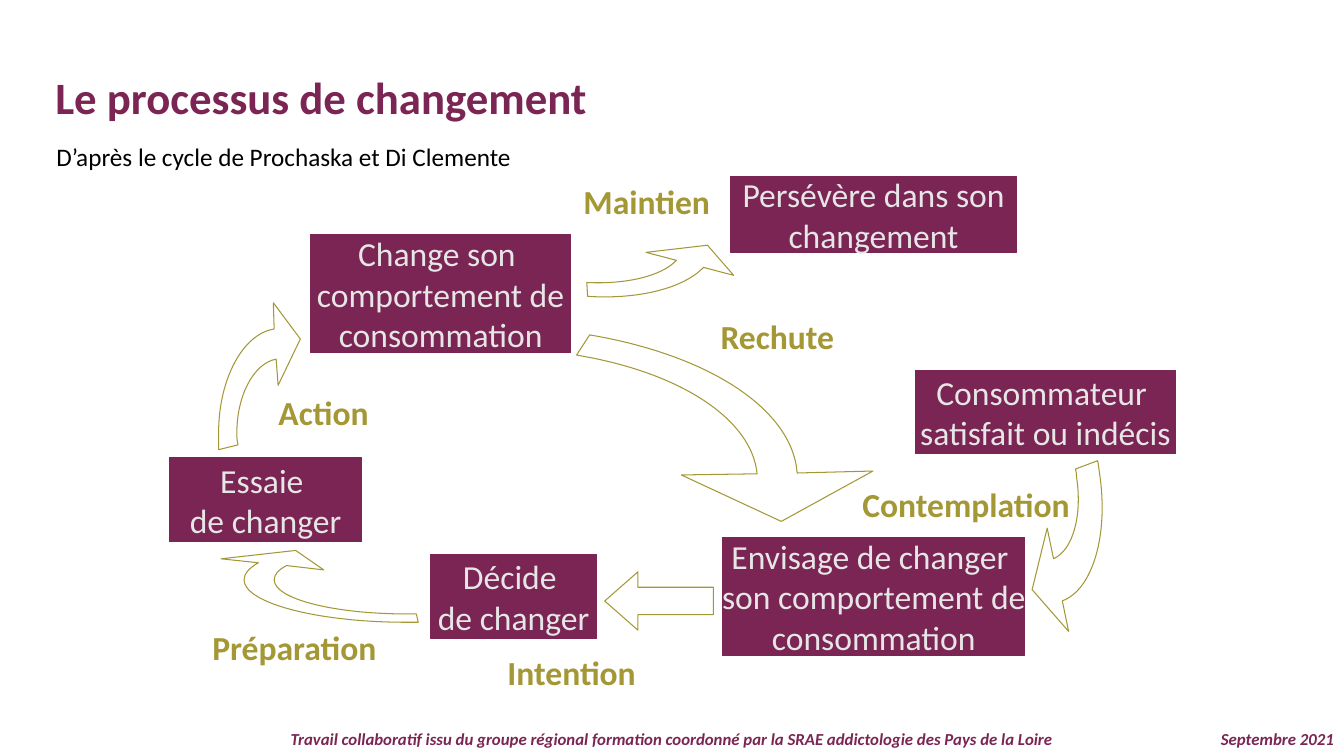
from math import cos, radians, sin

from lxml import etree
from pptx import Presentation
from pptx.dml.color import RGBColor
from pptx.enum.shapes import MSO_SHAPE
from pptx.enum.text import MSO_ANCHOR, MSO_AUTO_SIZE, PP_ALIGN
from pptx.oxml.ns import qn
from pptx.util import Cm, Pt

RECT, ARROW = MSO_SHAPE.RECTANGLE, MSO_SHAPE.LEFT_ARROW
TOP, MIDDLE = MSO_ANCHOR.TOP, MSO_ANCHOR.MIDDLE
LEFT, CENTER, RIGHT = PP_ALIGN.LEFT, PP_ALIGN.CENTER, PP_ALIGN.RIGHT
FIXED = MSO_AUTO_SIZE.NONE

PLUM, OLIVE, PALE, WHITE, BLACK = "7A2553", "A49735", "E7E6E6", "FFFFFF", "000000"
WIDTH, HEIGHT = 33.87, 19.05

# Centimetres from the corner of the cycle: left, top, width, height
STAGES = [
    ("Consommateur \nsatisfait ou indécis", 18.8, 4.88, 6.55, 2.11),
    ("Envisage de changer \nson comportement de\nconsommation", 13.94, 9.09, 7.62, 2.97),
    ("Décide \vde changer", 6.58, 9.53, 4.19, 2.11),
    ("Essaie \vde changer", 0, 7.09, 4.85, 2.11),
    ("Change son \ncomportement de\nconsommation", 3.56, 1.47, 6.55, 2.97),
    ("Persévère dans son\nchangement", 14.15, 0, 7.19, 1.91),
]
LABELS = [
    ("Rechute", 11.61, 3.61, 7.42),
    (" Contemplation", 17.12, 7.82, 5.72),
    ("Intention", 6.96, 12.07, 6.35),
    ("Préparation", 0.61, 11.43, 5.08),
    ("Action", 2.08, 5.51, 3.61),
    ("Maintien", 10.34, 0.2, 3.38),
]
# Box, turn in degrees, fill, outline: two numbers draw a line, six a Bézier curve
CONTEMPLATION = ((18.82, 6.12, 6.12, 3.18), 81.7, None, [
    (22.28, 9.63), (22.76, 9.42, 23.01, 8.56, 22.86, 7.57),
    (22.86, 7.52, 22.86, 7.44, 22.83, 7.37), (23.39, 7.16),
    (23.42, 7.26, 23.42, 7.39, 23.44, 7.49), (23.67, 9.02, 23.27, 10.41, 22.5, 10.69),
    (22.66, 11.46), (21.74, 10.41), (22.12, 8.86), (22.28, 9.63),
])
PREPARATION = ((1.88, 9.09, 8.2, 2.11), 180, WHITE, [
    (2.95, 9.8), (2.74, 9.91, 2.64, 10.03, 2.64, 10.16),
    (2.64, 10.64, 4.14, 11.02, 5.97, 11.02), (6.07, 11.02, 6.15, 11.02, 6.22, 11.02),
    (6.27, 11.23), (6.17, 11.23, 6.07, 11.23, 5.97, 11.23),
    (3.71, 11.23, 1.88, 10.74, 1.88, 10.16), (1.88, 10.01, 2.01, 9.86, 2.24, 9.73),
    (1.3, 9.63), (3.18, 9.42), (3.89, 9.91), (2.95, 9.8),
])
ACTION = ((0.18, 4.88, 5.28, 3.18), 270, WHITE, [
    (2.69, 4.6), (2.13, 4.7, 1.7, 5.51, 1.7, 6.45),
    (1.7, 6.55, 1.7, 6.65, 1.73, 6.76), (1.24, 6.88),
    (1.24, 6.73, 1.24, 6.6, 1.24, 6.45), (1.24, 5.11, 1.85, 3.96, 2.64, 3.84),
    (2.62, 3.18), (3.3, 4.09), (2.74, 5.26), (2.69, 4.6),
])
RELAPSE = ((0.61, 3.81, 15.24, 7.62), 0, WHITE, [
    (14.81, 7.49), (14.68, 6.12, 12.88, 4.93, 10.26, 4.5), (10.59, 3.99),
    (13.61, 4.5, 15.7, 5.87, 15.82, 7.47), (17.73, 7.42), (15.42, 8.69),
    (12.9, 7.52), (14.81, 7.49),
])
UPKEEP = ((7.16, 0, 6.55, 3), 5.1, WHITE, [
    (12.78, 2.11), (12.4, 2.51, 11.51, 2.72, 10.52, 2.67), (10.54, 3.02),
    (11.81, 3.1, 12.95, 2.82, 13.46, 2.29), (14.22, 2.49), (13.56, 1.73),
    (12.01, 1.91), (12.78, 2.11),
])


def color(code):
    return RGBColor.from_string(code)


def write(shape, text, size, ink, bold=False, italic=False, align=LEFT,
          anchor=TOP, wrap=True, spacing=None):
    frame = shape.text_frame
    frame.text = text
    frame.auto_size = FIXED
    frame.word_wrap = wrap
    frame.vertical_anchor = anchor
    for para in frame.paragraphs:
        para.alignment = align
        para.line_spacing = spacing
        for run in para.runs:
            font = run.font
            font.name, font.size = "Calibri", Pt(size)
            font.bold, font.italic = bold, italic
            font.color.rgb = color(ink)


def label(slide, box, text, size, ink, **form):
    shape = slide.shapes.add_textbox(*map(Cm, box))
    write(shape, text, size, ink, **form)


def paint(shape, fill, line):
    shape.shadow.inherit = False
    if fill:
        shape.fill.solid()
        shape.fill.fore_color.rgb = color(fill)
    else:
        shape.fill.background()
    shape.line.color.rgb = color(line)
    shape.line.width = Pt(0.75)


def unturn(part, box, turn):
    """Give the points of a part in the frame of its unturned box."""
    left, top, width, height = box
    c, s = cos(radians(turn)), sin(radians(turn))
    points = []
    for px, py in zip(part[::2], part[1::2]):
        dx, dy = px - left - width / 2, py - top - height / 2
        points.append((Cm(dx * c + dy * s + width / 2),
                       Cm(dy * c - dx * s + height / 2)))
    return points


def curve(slide, x, y, box, turn, fill, outline):
    parts = [unturn(part, box, turn) for part in outline]
    pen = slide.shapes.build_freeform(*parts[0][0])
    pen.add_line_segments([part[-1] for part in parts[1:]])
    shape = pen.convert_to_shape()
    left, top, width, height = box
    shape.left, shape.top = Cm(x + left), Cm(y + top)
    shape.width, shape.height = Cm(width), Cm(height)
    shape.rotation = turn
    paint(shape, fill, OLIVE)

    # Swap straight segments for Bézier ones, measured from the box corner
    route = next(shape.element.iter(qn("a:path")))
    for child in list(route):
        route.remove(child)
    route.set("w", str(Cm(width)))
    route.set("h", str(Cm(height)))
    for i, part in enumerate(parts):
        tag = "a:moveTo" if i == 0 else "a:lnTo" if len(part) == 1 else "a:cubicBezTo"
        node = etree.SubElement(route, qn(tag))
        for px, py in part:
            etree.SubElement(node, qn("a:pt"), x=str(int(px)), y=str(int(py)))
    etree.SubElement(route, qn("a:close"))


def cycle(slide, x, y):
    for text, left, top, width, height in STAGES:
        stage = slide.shapes.add_shape(
            RECT, Cm(x + left), Cm(y + top), Cm(width), Cm(height))
        paint(stage, PLUM, PLUM)
        write(stage, text, 24, PALE, align=CENTER, anchor=MIDDLE, wrap=False)

    curve(slide, x, y, *CONTEMPLATION)
    arrow = slide.shapes.add_shape(
        ARROW, Cm(x + 10.97), Cm(y + 9.96), Cm(2.74), Cm(1.47))
    arrow.adjustments[0], arrow.adjustments[1] = 0.47, 0.57
    paint(arrow, WHITE, OLIVE)
    for form in (PREPARATION, ACTION, RELAPSE, UPKEEP):
        curve(slide, x, y, *form)

    for text, left, top, width in LABELS:
        label(slide, (x + left, y + top, width, 0.84), text, 24, OLIVE,
              bold=True, align=CENTER, anchor=MIDDLE, wrap=False)


def header(slide, x, y, width):
    title = slide.shapes.title
    title.left, title.top = Cm(x), Cm(y)
    title.width, title.height = Cm(width), Cm(1.63)
    write(title, "Le processus de changement", 32, PLUM, bold=True)
    label(slide, (x + 0.03, y + 1.81, 16.61, 1.02),
          "D’après le cycle de Prochaska et Di Clemente", 18, BLACK)


def footer(slide, x, y, width):
    form = dict(bold=True, italic=True, spacing=0.9)
    label(slide, (x, y, width, 0.76),
          "Travail collaboratif issu du groupe régional formation coordonné "
          "par la SRAE addictologie des Pays de la Loire",
          12, PLUM, align=CENTER, **form)
    label(slide, (x + width - 4.01, y, 4.01, 0.76), "Septembre 2021",
          12, PLUM, align=RIGHT, **form)


def main():
    deck = Presentation()
    deck.slide_width, deck.slide_height = Cm(WIDTH), Cm(HEIGHT)
    slide = deck.slides.add_slide(deck.slide_layouts[5])
    footer(slide, 0, 18.29, WIDTH)
    cycle(slide, 4.27, 4.45)
    header(slide, 1.14, 1.62, 32.94)
    deck.save("out.pptx")


if __name__ == "__main__":
    main()
